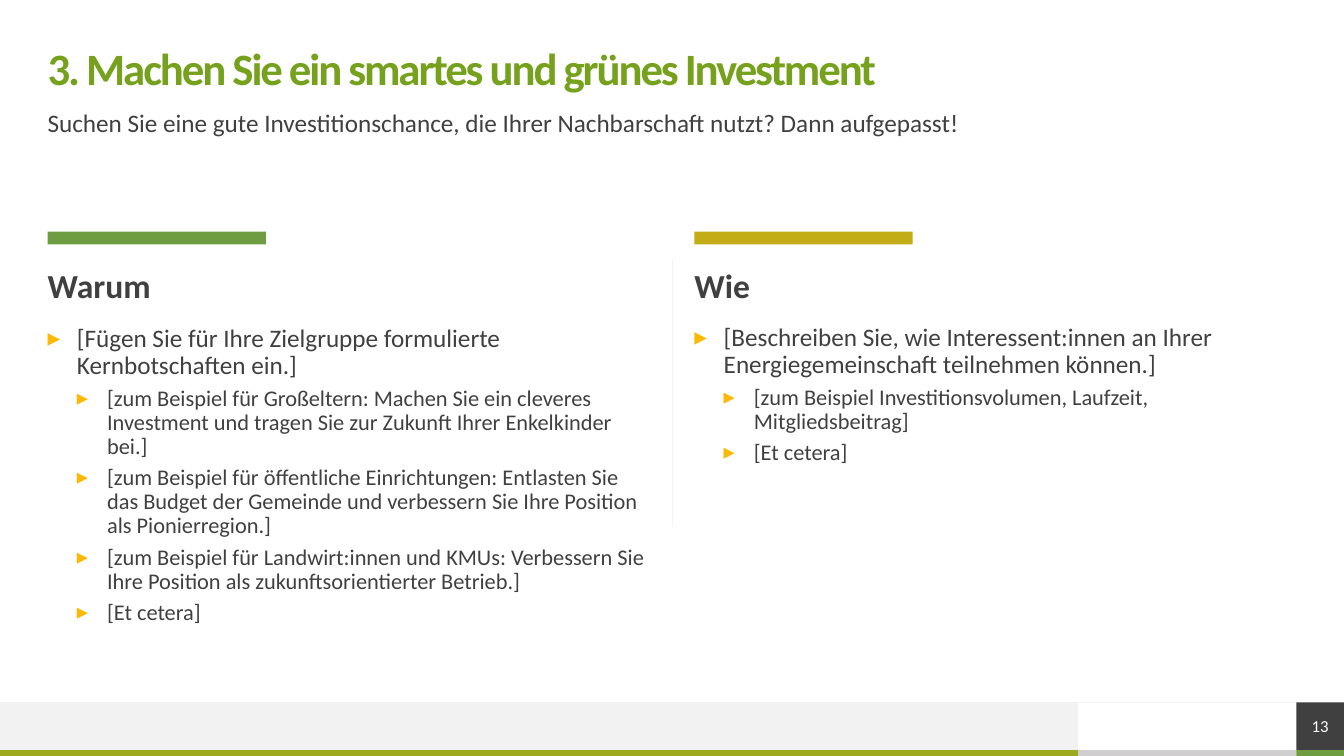
from lxml import etree
from pptx import Presentation
from pptx.dml.color import RGBColor
from pptx.enum.shapes import MSO_CONNECTOR, MSO_SHAPE
from pptx.enum.text import MSO_ANCHOR, PP_ALIGN
from pptx.oxml.ns import qn
from pptx.util import Cm, Pt

RECTANGLE = MSO_SHAPE.RECTANGLE
STRAIGHT = MSO_CONNECTOR.STRAIGHT
TOP, MIDDLE = MSO_ANCHOR.TOP, MSO_ANCHOR.MIDDLE
CENTER = PP_ALIGN.CENTER

WHITE = RGBColor(0xFF, 0xFF, 0xFF)
PALE = RGBColor(0xF2, 0xF2, 0xF2)
SILVER = RGBColor(0xD0, 0xCE, 0xCE)
DARK = RGBColor(0x40, 0x40, 0x40)
TITLE_GREEN = RGBColor(0x75, 0xA1, 0x1D)
GREEN = RGBColor(0x6D, 0x9D, 0x40)
LIME = RGBColor(0x9C, 0xAA, 0x20)
MUSTARD = RGBColor(0xC3, 0xAD, 0x16)
AMBER = RGBColor(0xFB, 0xB8, 0x04)

# Lengths in centimetres
WIDTH, HEIGHT = 33.87, 19.05
MARGIN = 1.2
CONTENT_WIDTH = WIDTH - 2 * MARGIN
COLUMN_WIDTH = 15.2
FOOTER_TOP, STRIPE_TOP = 17.7, 18.9
FOOTER_HEIGHT, STRIPE_HEIGHT = STRIPE_TOP - FOOTER_TOP, HEIGHT - STRIPE_TOP
FOOTER_WIDTH = 27.17
NUMBER_LEFT = WIDTH - FOOTER_HEIGHT

# Per level: text size, space before, left margin, hanging indent
BULLET_LEVELS = [(18, 10, 0.74, 0.74), (16, 5, 1.5, 0.76)]

# Left edge, bar colour, heading, top of list, list of (level, text)
COLUMNS = [
    (MARGIN, GREEN, "Warum", 8.2, [
        (0, "[Fügen Sie für Ihre Zielgruppe formulierte Kernbotschaften ein.]"),
        (1, "[zum Beispiel für Großeltern: Machen Sie ein cleveres Investment "
            "und tragen Sie zur Zukunft Ihrer Enkelkinder bei.]"),
        (1, "[zum Beispiel für öffentliche Einrichtungen: Entlasten Sie das "
            "Budget der Gemeinde und verbessern Sie Ihre Position als "
            "Pionierregion.]"),
        (1, "[zum Beispiel für Landwirt:innen und KMUs: Verbessern Sie Ihre "
            "Position als zukunftsorientierter Betrieb.]"),
        (1, "[Et cetera]"),
    ]),
    (17.5, MUSTARD, "Wie", 8.18, [
        (0, "[Beschreiben Sie, wie Interessent:innen an Ihrer "
            "Energiegemeinschaft teilnehmen können.]"),
        (1, "[zum Beispiel Investitionsvolumen, Laufzeit, Mitgliedsbeitrag]"),
        (1, "[Et cetera]"),
    ]),
]


class SlideBuilder:
    font_name = "Calibri"
    line_spacing = 0.9

    def __init__(self, slide):
        self.slide = slide

    def bar(self, left, top, width, height, color):
        shape = self.slide.shapes.add_shape(
            RECTANGLE, Cm(left), Cm(top), Cm(width), Cm(height))
        shape.shadow.inherit = False
        shape.fill.solid()
        shape.fill.fore_color.rgb = color
        shape.line.fill.background()
        return shape

    def line(self, start_x, start_y, end_x, end_y):
        connector = self.slide.shapes.add_connector(
            STRAIGHT, Cm(start_x), Cm(start_y), Cm(end_x), Cm(end_y))
        connector.line.color.rgb = PALE
        connector.line.width = Pt(0.5)
        etree.SubElement(connector._element.spPr, qn("a:effectLst"))

    def prepare(self, text_frame, anchor=TOP):
        text_frame.word_wrap = True
        text_frame.vertical_anchor = anchor
        text_frame.margin_left = text_frame.margin_right = 0
        text_frame.margin_top = text_frame.margin_bottom = 0

    def fill_paragraph(self, paragraph, text, size, color=DARK, bold=False):
        paragraph.text = text
        paragraph.line_spacing = self.line_spacing
        font = paragraph.runs[0].font
        font.name, font.size, font.bold = self.font_name, Pt(size), bold
        font.color.rgb = color

    def box(self, left, top, width, height, anchor=TOP):
        shape = self.slide.shapes.add_textbox(
            Cm(left), Cm(top), Cm(width), Cm(height))
        self.prepare(shape.text_frame, anchor)
        return shape.text_frame

    def text(self, left, top, width, height, text, size, color=DARK,
             bold=False, anchor=TOP):
        paragraph = self.box(left, top, width, height, anchor).paragraphs[0]
        self.fill_paragraph(paragraph, text, size, color, bold)
        return paragraph

    def bullets(self, left, top, width, height, items):
        text_frame = self.box(left, top, width, height)
        for index, (level, text) in enumerate(items):
            paragraph = (text_frame.add_paragraph() if index
                         else text_frame.paragraphs[0])
            size, space_before, margin, hanging = BULLET_LEVELS[level]
            paragraph.level = level
            properties = paragraph._p.get_or_add_pPr()
            properties.set("marL", str(Cm(margin)))
            properties.set("indent", str(-Cm(hanging)))
            bullet_color = etree.SubElement(properties, qn("a:buClr"))
            etree.SubElement(bullet_color, qn("a:srgbClr"), val=str(AMBER))
            etree.SubElement(properties, qn("a:buFont"), typeface=self.font_name)
            etree.SubElement(properties, qn("a:buChar"), char="▸")
            self.fill_paragraph(paragraph, text, size)
            if index:
                paragraph.space_before = Pt(space_before)

    def page_number(self, left, top, side, text):
        shape = self.bar(left, top, side, side, DARK)
        self.prepare(shape.text_frame, MIDDLE)
        paragraph = shape.text_frame.paragraphs[0]
        self.fill_paragraph(paragraph, text, 12, WHITE)
        paragraph.line_spacing = 1.0
        paragraph.alignment = CENTER


def main():
    presentation = Presentation()
    presentation.slide_width, presentation.slide_height = Cm(WIDTH), Cm(HEIGHT)
    builder = SlideBuilder(
        presentation.slides.add_slide(presentation.slide_layouts[6]))

    # Footer
    builder.bar(0, FOOTER_TOP, FOOTER_WIDTH, FOOTER_HEIGHT, PALE)
    for left, right, color in [(0, FOOTER_WIDTH, LIME),
                               (FOOTER_WIDTH, NUMBER_LEFT, SILVER),
                               (NUMBER_LEFT, WIDTH, GREEN)]:
        builder.bar(left, STRIPE_TOP, right - left, STRIPE_HEIGHT, color)
    builder.line(WIDTH, FOOTER_TOP, 0, FOOTER_TOP)
    builder.page_number(NUMBER_LEFT, FOOTER_TOP, FOOTER_HEIGHT, "13")

    # Title and subtitle
    title = builder.text(MARGIN, 1.2, CONTENT_WIDTH, 1.2,
                         "3. Machen Sie ein smartes und grünes Investment",
                         32, TITLE_GREEN, bold=True, anchor=MIDDLE)
    title.runs[0]._r.get_or_add_rPr().set("spc", "-150")
    builder.text(MARGIN, 2.8, CONTENT_WIDTH, 1,
                 "Suchen Sie eine gute Investitionschance, die Ihrer "
                 "Nachbarschaft nutzt? Dann aufgepasst!", 18)

    # Two columns with a divider
    for left, color, heading, list_top, items in COLUMNS:
        builder.bar(left, 5.84, 5.5, 0.32, color)
        builder.text(left, 6.78, COLUMN_WIDTH, 1, heading, 24, bold=True)
        builder.bullets(left, list_top, COLUMN_WIDTH, 6.1, items)
    builder.line(WIDTH / 2, 6.55, WIDTH / 2, 13.25)

    presentation.save("out.pptx")


if __name__ == "__main__":
    main()
